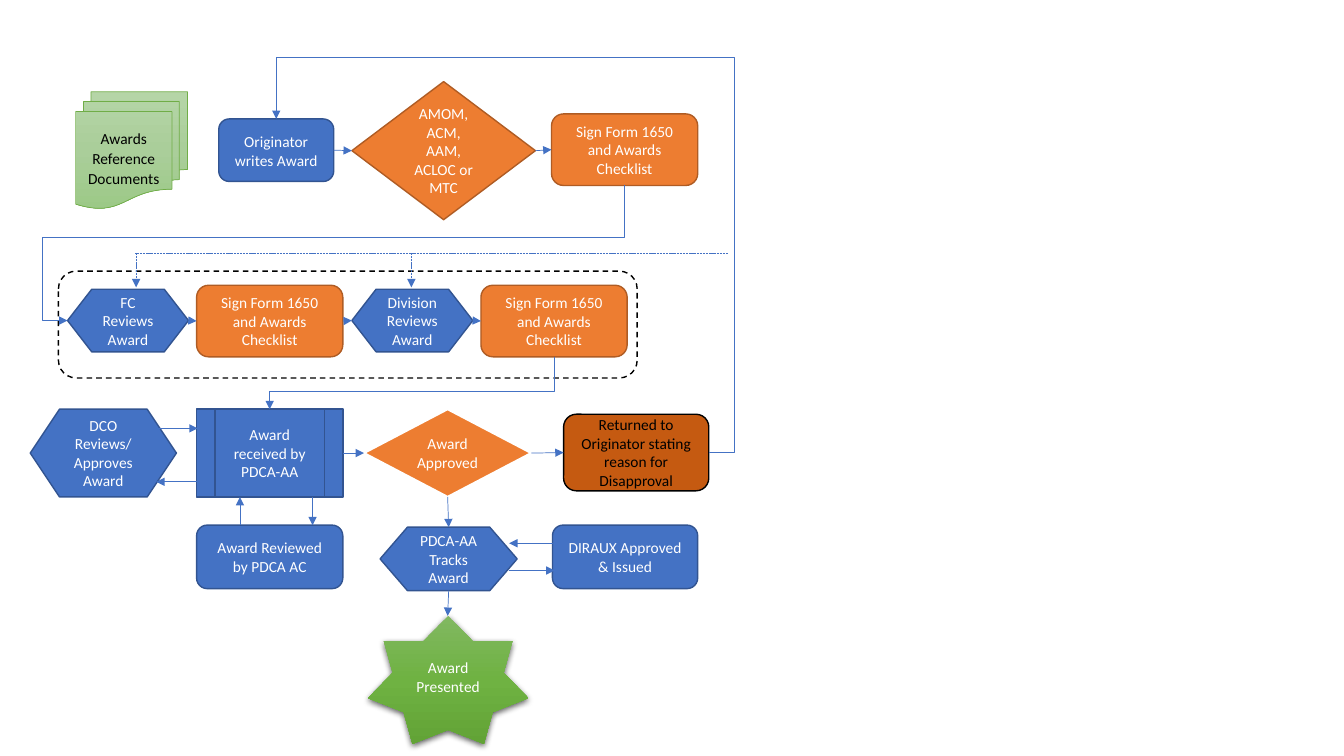
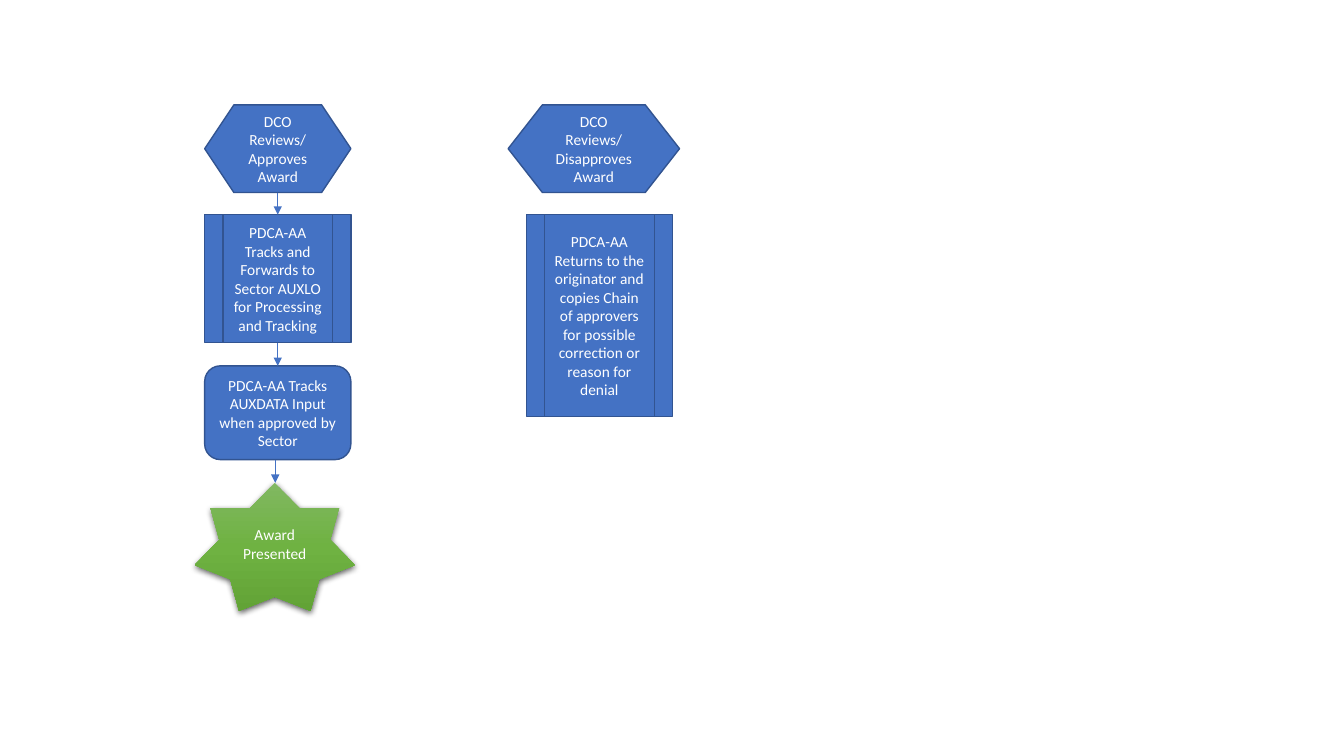
from dataclasses import dataclass
from typing import NamedTuple

from lxml import etree
from pptx import Presentation
from pptx.dml.color import RGBColor
from pptx.enum.dml import MSO_LINE as Dash
from pptx.enum.shapes import MSO_CONNECTOR as Cxn, MSO_SHAPE as Geo
from pptx.enum.text import MSO_ANCHOR, PP_ALIGN
from pptx.oxml.ns import qn
from pptx.util import Emu, Inches, Pt


# Theme
@dataclass(frozen=True)
class Theme:
    font: str = "Calibri"
    size: float = 11
    white: str = "FFFFFF"
    black: str = "000000"
    blue: str = "4472C4"
    blue_edge: str = "325491"
    orange: str = "ED7D31"
    orange_edge: str = "AF5C24"
    rust: str = "C55A11"
    green_edge: str = "70AD47"
    pale_greens: tuple[str, ...] = ("B5D5A7", "AACE9A", "9CC987")
    greens: tuple[str, ...] = ("81B861", "6FB242", "62A336")
    thin: float = 0.5


T = Theme()


@dataclass(frozen=True)
class Style:
    fill: str | tuple[str, ...]
    edge: str | None
    width: float = 1
    text: str = T.white
    dash: Dash | None = None
    shadow: bool = False


STEP = Style(T.blue, T.blue_edge)
SIGN = Style(T.orange, T.orange_edge)
DECISION = Style(T.orange, T.white, 1.5)
RETURNED = Style(T.rust, T.black, text=T.black)
DOCUMENTS = Style(T.pale_greens, T.green_edge, T.thin, T.black)
FRAME = Style(T.white, T.black, dash=Dash.DASH)
AWARD = Style(T.greens, None, shadow=True)


# Parts of a flowchart
class Node(NamedTuple):
    name: str
    geo: Geo
    style: Style
    left: float
    top: float
    width: float
    height: float
    text: str = ""
    loose: bool = False


class Joint(NamedTuple):
    name: str
    site: int


class Point(NamedTuple):
    x: float
    y: float


@dataclass(frozen=True)
class Link:
    begin: Joint | Point
    end: Joint | Point
    dash: Dash | None = None
    arrow: bool = True
    bends: tuple[float, ...] = ()
    turned: bool = False  # leaves vertically, so the elbow is rotated by 90 degrees


TOP, LEFT, BOTTOM, RIGHT = range(4)
BOX_W, SIGN_H, TALL_H = 1.45, 0.71, 0.87
STAR_W, STAR_H = 1.59, 1.27
ROUND = Geo.ROUNDED_RECTANGLE
ALT = Geo.FLOWCHART_ALTERNATE_PROCESS
HEX = Geo.FLOWCHART_PREPARATION
DIAMOND = Geo.FLOWCHART_DECISION
PROCESS = Geo.FLOWCHART_PREDEFINED_PROCESS
STAR = Geo.STAR_7_POINT
SIGN_TEXT = "Sign Form 1650 and Awards Checklist"
APPROVE_TEXT = "DCO Reviews/ Approves Award"
PRESENTED_TEXT = "Award Presented"


def sign_box(name: str, left: float, top: float) -> Node:
    return Node(name, ALT, SIGN, left, top, BOX_W, SIGN_H, SIGN_TEXT)


def review_hex(name: str, left: float, text: str) -> Node:
    return Node(name, HEX, STEP, left, 2.87, 1.2, 0.62, text)


def star(left: float, top: float) -> Node:
    return Node("star", STAR, AWARD, left, top, STAR_W, STAR_H, PRESENTED_TEXT)


def across(a: str, b: str) -> Link:
    return Link(Joint(a, RIGHT), Joint(b, LEFT))


def down(a: str, b: str) -> Link:
    return Link(Joint(a, BOTTOM), Joint(b, TOP))


def free(x1: float, y1: float, x2: float, y2: float) -> Link:
    return Link(Point(x1, y1), Point(x2, y2))


# Slide 1: award approval route
APPROVAL_NODES = [
    Node("documents", Geo.FLOWCHART_MULTIDOCUMENT, DOCUMENTS, 0.75, 0.91, 1.11, 1.16,
         "Awards Reference Documents", True),
    Node("originator", ROUND, STEP, 2.17, 1.18, 1.14, 0.62, "Originator writes Award", True),
    Node("kind", DIAMOND, SIGN, 3.49, 0.81, 1.82, 1.37, "AMOM, ACM, AAM, ACLOC or MTC"),
    sign_box("sign", 5.47, 1.13),
    Node("frame", ALT, FRAME, 0.58, 2.69, 5.74, 1.06),
    review_hex("fc", 0.67, "FC Reviews Award"),
    sign_box("fc sign", 1.95, 2.83),
    review_hex("division", 3.49, "Division Reviews Award"),
    sign_box("division sign", 4.77, 2.83),
    Node("dco", HEX, STEP, 0.3, 4.06, BOX_W, TALL_H, APPROVE_TEXT),
    Node("received", PROCESS, STEP, 1.95, 4.06, BOX_W, TALL_H, "Award received by PDCA-AA"),
    Node("approved", DIAMOND, DECISION, 3.61, 4.06, 1.66, TALL_H, "Award Approved"),
    Node("returned", ROUND, RETURNED, 5.59, 4.11, 1.44, 0.76,
         "Returned to Originator stating reason for Disapproval"),
    Node("reviewed", ALT, STEP, 1.95, 5.21, BOX_W, 0.63, "Award Reviewed by PDCA AC"),
    Node("tracks", HEX, STEP, 3.77, 5.23, 1.36, 0.63, "PDCA-AA Tracks Award"),
    Node("issued", ROUND, STEP, 5.48, 5.21, 1.44, 0.63, "DIRAUX Approved & Issued"),
    star(3.65, 6.11),
]
APPROVAL_LINKS = [
    across("originator", "kind"),
    across("kind", "sign"),
    across("fc", "fc sign"),
    across("fc sign", "division"),
    across("division", "division sign"),
    across("received", "approved"),
    across("approved", "returned"),
    down("approved", "tracks"),
    Link(Joint("tracks", BOTTOM), Point(4.44, 6.11)),
    # Two-way exchanges
    free(3.1, 4.93, 3.1, 5.21),
    free(2.38, 5.21, 2.38, 4.93),
    free(1.98, 4.78, 1.55, 4.78),
    free(1.53, 4.25, 1.96, 4.25),
    free(5.05, 5.66, 5.5, 5.66),
    free(5.48, 5.39, 5.05, 5.39),
    # Routes between rows
    Link(Joint("sign", BOTTOM), Joint("fc", LEFT), bends=(0.385, 1.045), turned=True),
    Link(Joint("division sign", BOTTOM), Joint("received", TOP), bends=(0.655,), turned=True),
    Link(Joint("returned", RIGHT), Joint("originator", TOP), bends=(-0.058, 1.184)),
    # Dashed return to the reviewers
    Link(Point(7.22, 2.51), Point(1.34, 2.51), Dash.SQUARE_DOT, arrow=False),
    *(Link(Point(x, 2.51), Point(x, 2.85), Dash.SQUARE_DOT) for x in (1.35, 4.08)),
]

# Slide 2: outcomes of the DCO review
OUTCOME_NODES = [
    Node("approves", HEX, STEP, 2.03, 1.04, BOX_W, TALL_H, APPROVE_TEXT),
    Node("forwards", PROCESS, STEP, 2.03, 2.13, BOX_W, 1.27,
         "PDCA-AA Tracks and Forwards to Sector AUXLO for Processing and Tracking"),
    Node("input", ALT, STEP, 2.03, 3.63, BOX_W, 0.93,
         "PDCA-AA Tracks AUXDATA Input when approved by Sector"),
    star(1.93, 4.79),
    Node("disapproves", HEX, STEP, 5.04, 1.04, 1.7, TALL_H, "DCO Reviews/ Disapproves Award"),
    Node("returns", PROCESS, STEP, 5.22, 2.13, BOX_W, 2,
         "PDCA-AA Returns to the originator and copies Chain of approvers "
         "for possible correction or reason for denial"),
]
OUTCOME_LINKS = [
    down("approves", "forwards"),
    down("forwards", "input"),
    free(2.73, 4.56, 2.73, 4.79),
]


# Drawing
def rgb(color: str) -> RGBColor:
    return RGBColor.from_string(color)


def add_color(parent, color: str):
    return etree.SubElement(parent, qn("a:srgbClr"), val=color)


def fill_gradient(sp, colors: tuple[str, ...]) -> None:
    sp.fill.gradient()
    sp.fill.gradient_angle = 270
    stops = sp.element.spPr.find(qn("a:gradFill")).find(qn("a:gsLst"))
    for old in list(stops):
        stops.remove(old)
    for i, color in enumerate(colors):
        pos = 100000 * i // (len(colors) - 1)
        add_color(etree.SubElement(stops, qn("a:gs"), pos=str(pos)), color)


def add_shadow(sp) -> None:
    effects = sp.element.spPr.find(qn("a:effectLst"))
    outer = etree.SubElement(effects, qn("a:outerShdw"), blurRad=str(Pt(4.5)),
                             dist=str(Pt(1.5)), dir="5400000", rotWithShape="0")
    etree.SubElement(add_color(outer, T.black), qn("a:alpha"), val="63000")


def add_node(s, node: Node):
    style = node.style
    sp = s.shapes.add_shape(node.geo, Inches(node.left), Inches(node.top),
                            Inches(node.width), Inches(node.height))
    sp.shadow.inherit = False
    if isinstance(style.fill, tuple):
        fill_gradient(sp, style.fill)
    else:
        sp.fill.solid()
        sp.fill.fore_color.rgb = rgb(style.fill)
    if style.edge:
        sp.line.color.rgb = rgb(style.edge)
        sp.line.width = Pt(style.width)
    else:
        sp.line.fill.background()
    if style.dash:
        sp.line.dash_style = style.dash
    if style.shadow:
        add_shadow(sp)
    if node.text:
        tf = sp.text_frame
        tf.word_wrap = True
        tf.vertical_anchor = MSO_ANCHOR.MIDDLE
        p = tf.paragraphs[0]
        p.alignment = PP_ALIGN.CENTER
        if node.loose:
            p.line_spacing, p.space_after = 1.07, Pt(8)
        r = p.add_run()
        r.text = node.text
        r.font.name, r.font.size = T.font, Pt(T.size)
        r.font.color.rgb = rgb(style.text)
    return sp


def bend(cxn, bends: tuple[float, ...], turned: bool) -> None:
    geom = cxn.element.spPr.find(qn("a:prstGeom"))
    geom.set("prst", f"bentConnector{len(bends) + 2}")
    guides = geom.find(qn("a:avLst"))
    if guides is None:
        guides = etree.SubElement(geom, qn("a:avLst"))
    for i, share in enumerate(bends, 1):
        etree.SubElement(guides, qn("a:gd"), name=f"adj{i}", fmla=f"val {round(share * 100000)}")
    if turned:
        mid_x = (cxn.begin_x + cxn.end_x) // 2
        mid_y = (cxn.begin_y + cxn.end_y) // 2
        w, h = cxn.height, cxn.width
        cxn.left, cxn.top = Emu(mid_x - w // 2), Emu(mid_y - h // 2)
        cxn.width, cxn.height = w, h
        xfrm = cxn.element.spPr.find(qn("a:xfrm"))
        xfrm.attrib.pop("flipH", None)
        xfrm.set("rot", "5400000")


def add_link(s, shapes: dict, link: Link) -> None:
    def spot(end: Joint | Point) -> tuple[int, int]:
        return (Inches(end.x), Inches(end.y)) if isinstance(end, Point) else (0, 0)

    kind = Cxn.ELBOW if link.bends else Cxn.STRAIGHT
    cxn = s.shapes.add_connector(kind, *spot(link.begin), *spot(link.end))
    if isinstance(link.begin, Joint):
        cxn.begin_connect(shapes[link.begin.name], link.begin.site)
    if isinstance(link.end, Joint):
        cxn.end_connect(shapes[link.end.name], link.end.site)
    if link.bends:
        bend(cxn, link.bends, link.turned)
    cxn.line.color.rgb = rgb(T.blue)
    cxn.line.width = Pt(T.thin)
    if link.dash:
        cxn.line.dash_style = link.dash
    spPr = cxn.element.spPr
    if link.arrow:
        etree.SubElement(spPr.find(qn("a:ln")), qn("a:tailEnd"), type="triangle")
    etree.SubElement(spPr, qn("a:effectLst"))


def add_flowchart(prs, nodes: list[Node], links: list[Link]) -> None:
    s = prs.slides.add_slide(prs.slide_layouts[6])
    shapes = {node.name: add_node(s, node) for node in nodes}
    for link in links:
        add_link(s, shapes, link)


def main() -> None:
    prs = Presentation()
    prs.slide_width, prs.slide_height = Inches(13.33), Inches(7.5)
    add_flowchart(prs, APPROVAL_NODES, APPROVAL_LINKS)
    add_flowchart(prs, OUTCOME_NODES, OUTCOME_LINKS)
    prs.save("out.pptx")


if __name__ == "__main__":
    main()
